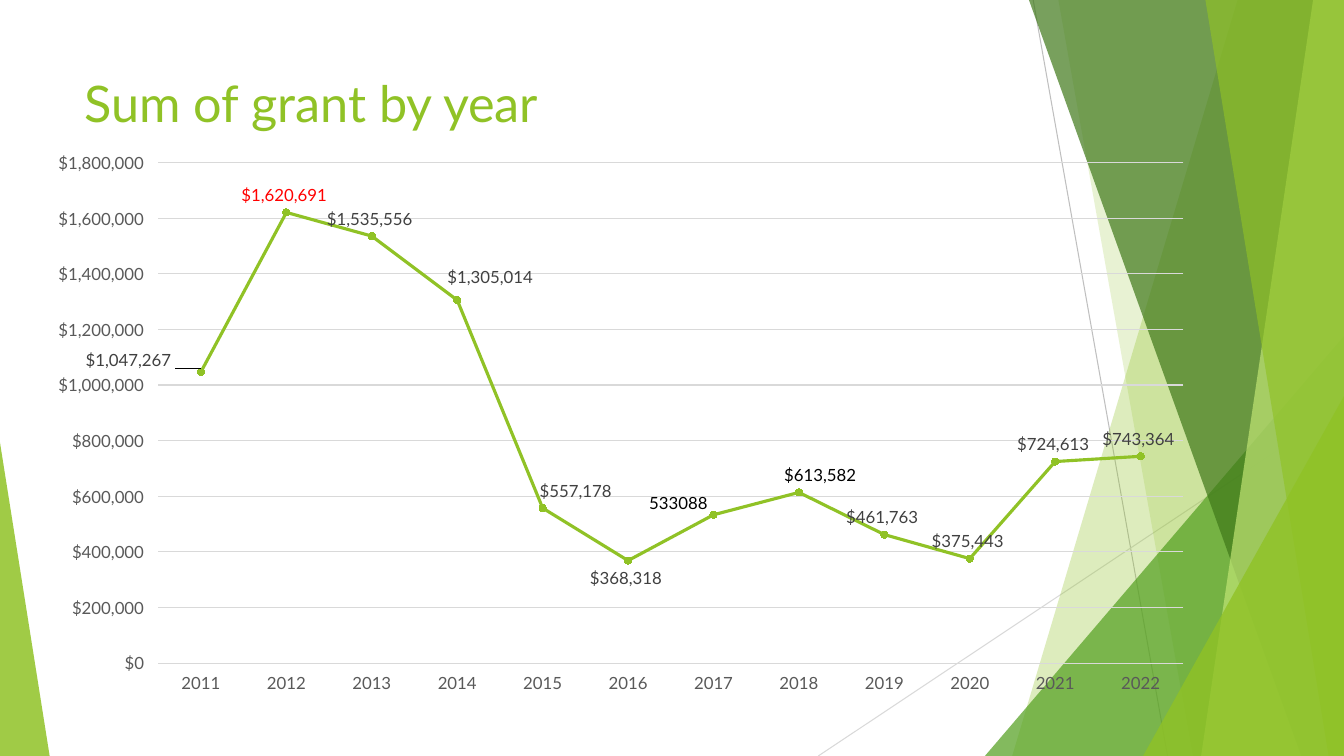
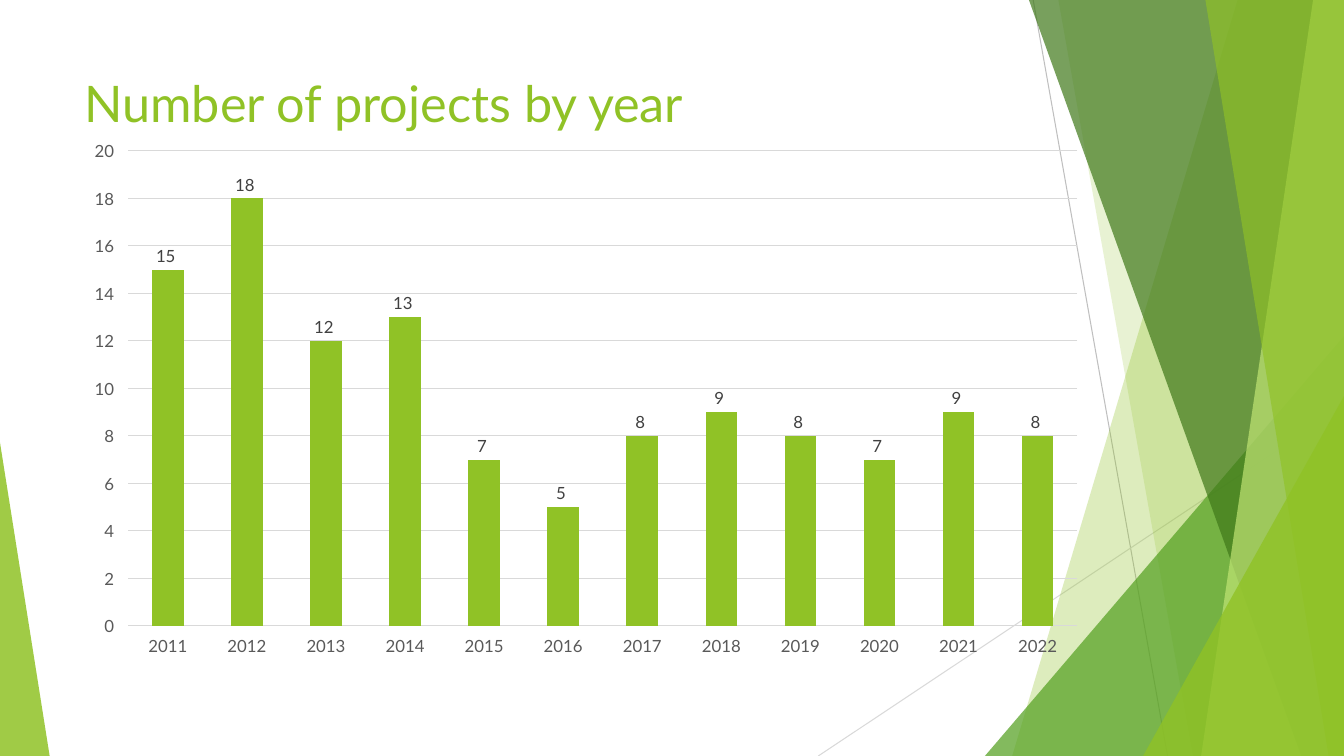
from pptx import Presentation
from pptx.chart.data import CategoryChartData as ChartData
from pptx.dml.color import RGBColor as Rgb
from pptx.enum.chart import XL_CHART_TYPE as Kind
from pptx.enum.chart import XL_LABEL_POSITION as Spot
from pptx.enum.chart import XL_MARKER_STYLE as Mark
from pptx.enum.chart import XL_TICK_LABEL_POSITION as Side
from pptx.enum.chart import XL_TICK_MARK as Tick
from pptx.enum.shapes import MSO_CONNECTOR as Link
from pptx.enum.shapes import MSO_SHAPE as Form
from pptx.enum.text import MSO_ANCHOR as Anchor
from pptx.enum.text import PP_ALIGN as Align
from pptx.oxml.ns import qn
from pptx.util import Pt
from lxml.etree import SubElement as sub

WIDE, HIGH = 960, 540
FONT = "Lato"
COLORS = {
    "lime": "90C226", "green": "54A021", "dark": "3F7819", "pale": "C0E474",
    "gray": "BFBFBF", "grid": "D9D9D9", "axis": "595959", "label": "404040",
    "black": "000000", "red": "FF0000",
}

# Backdrop, from back to front
RULES = [((738, 0), (834, HIGH), "gray"), ((WIDE, 290), (584.5, HIGH), "grid")]
# Bands run to the right edge: top x, bottom x, colour, opacity
# Wedges: left, top, width, height, apex, colour, opacity
PANES = [
    ("band", 884, 723, "lime", 30),
    ("band", 756, 852, "lime", 20),
    ("wedge", 703.5, 240, 256.5, 300, 1, "green", 72),
    ("band", 735, 929.5, "dark", 70),
    ("band", 938, 858, "pale", 70),
    ("band", 861, 949, "lime", 65),
    ("wedge", 816.5, 283, 143.5, 257, 1, "lime", 80),
    ("wedge", 0, 316, 35.5, 224, 0, "lime", 85),
]

YEARS = [str(year) for year in range(2011, 2023)]
GRANTS = [1047267, 1620691, 1535556, 1305014, 557178, 368318,
          533088, 613582, 461763, 375443, 724613, 743364]
COUNTS = [15, 18, 12, 13, 7, 5, 8, 9, 8, 7, 9, 8]

# Moved labels: point, side, shift as a share of the chart, colour, text
NOTES = [
    (0, Spot.ABOVE, (-0.06, 0.01), "label", None),
    (1, Spot.ABOVE, (0, 0), "red", None),
    (3, Spot.ABOVE, (0.03, -0.01), "label", None),
    (4, Spot.ABOVE, (0.03, 0), "label", None),
    (5, Spot.BELOW, (0, 0), "label", None),
    (6, Spot.ABOVE, (-0.03, 0.01), "black", "533088"),
    (7, Spot.ABOVE, (0.02, 0), "black", None),
]


def rgb(name):
    return Rgb.from_string(COLORS[name])


class Deck:
    def __init__(self):
        self.prs = Presentation()
        self.prs.slide_width, self.prs.slide_height = Pt(WIDE), Pt(HIGH)
        self.slide = None

    def style(self, font, size, color):
        font.name, font.size, font.color.rgb = FONT, Pt(size), rgb(color)

    def paint(self, shape, color, alpha):
        shape.shadow.inherit = False
        shape.line.fill.background()
        shape.fill.solid()
        shape.fill.fore_color.rgb = rgb(color)
        tint = next(shape.element.spPr.iter(qn("a:srgbClr")))
        sub(tint, qn("a:alpha")).set("val", str(alpha * 1000))

    def rule(self, start, end, color):
        line = self.slide.shapes.add_connector(
            Link.STRAIGHT, *(Pt(n) for n in start + end))
        line.line.color.rgb, line.line.width = rgb(color), Pt(0.75)
        sub(line.element.spPr, qn("a:effectLst"))

    def band(self, top, base, color, alpha):
        pen = self.slide.shapes.build_freeform(Pt(top), 0)
        pen.add_line_segments([(Pt(x), Pt(y)) for x, y in (
            (WIDE, 0), (WIDE, HIGH), (base, HIGH))])
        self.paint(pen.convert_to_shape(), color, alpha)

    def wedge(self, left, top, width, height, apex, color, alpha):
        shape = self.slide.shapes.add_shape(
            Form.ISOSCELES_TRIANGLE, Pt(left), Pt(top), Pt(width), Pt(height))
        shape.adjustments[0] = apex
        self.paint(shape, color, alpha)

    def page(self, text):
        self.slide = self.prs.slides.add_slide(self.prs.slide_layouts[5])
        for rule in RULES:
            self.rule(*rule)
        for kind, *pane in PANES:
            (self.band if kind == "band" else self.wedge)(*pane)
        title = self.slide.shapes.title
        title.left, title.top = Pt(53), Pt(48)
        title.width, title.height = Pt(677), Pt(53)
        frame = title.text_frame
        frame.text = text
        frame.vertical_anchor = Anchor.TOP
        frame.paragraphs[0].alignment = Align.LEFT
        self.style(frame.paragraphs[0].runs[0].font, 36, "lime")

    def chart(self, kind, box, vals, form, top, step, spot):
        data = ChartData(number_format=form)
        data.categories = YEARS
        data.add_series("Series 1", vals)
        chart = self.slide.shapes.add_chart(
            kind, *(Pt(n) for n in box), data).chart
        chart.has_legend = chart.has_title = False
        self.style(chart.font, 10, "black")
        # Axes
        cat, val = chart.category_axis, chart.value_axis
        for axis in (cat, val):
            axis.major_tick_mark = axis.minor_tick_mark = Tick.NONE
            axis.tick_label_position = Side.LOW
            self.style(axis.tick_labels.font, 12, "axis")
        val.minimum_scale, val.maximum_scale, val.major_unit = 0, top, step
        val.tick_labels.number_format = form
        val.tick_labels.number_format_is_linked = False
        val.format.line.fill.background()
        for line in (cat.format.line, val.major_gridlines.format.line):
            line.color.rgb, line.width = rgb("grid"), Pt(0.75)
        # Labels
        chart.plots[0].vary_by_categories = False
        row = chart.plots[0].series[0]
        labels = row.data_labels
        labels.show_value, labels.position = True, spot
        self.style(labels.font, 12, "label")
        return chart, row

    def bars(self, *args):
        chart, row = self.chart(Kind.COLUMN_CLUSTERED, *args, Spot.OUTSIDE_END)
        chart.plots[0].gap_width = 150
        row.format.fill.solid()
        row.format.fill.fore_color.rgb = rgb("lime")

    def trend(self, *args):
        chart, row = self.chart(Kind.LINE_MARKERS_STACKED, *args, Spot.ABOVE)
        row.smooth = False
        row.format.line.color.rgb, row.format.line.width = rgb("lime"), Pt(2.25)
        mark = row.marker
        mark.style, mark.size = Mark.CIRCLE, 5
        mark.format.fill.solid()
        mark.format.fill.fore_color.rgb = rgb("lime")
        mark.format.line.color.rgb = rgb("lime")
        for point, spot, shift, color, text in NOTES:
            self.note(row.points[point].data_label, spot, color, text)
        for node, note in zip(chart.element.iter(qn("c:dLbl")), NOTES):
            self.shift(node, note[2])

    def note(self, label, spot, color, text):
        font = label.font
        if text:
            label.text_frame.text = text
            font = label.text_frame.paragraphs[0].runs[0].font
        self.style(font, 12, color)
        label.position = spot

    def shift(self, node, move):
        place = node.makeelement(qn("c:layout"))
        node.find(qn("c:idx")).addnext(place)
        box = sub(place, qn("c:manualLayout"))
        for axis, part in zip("xy", move):
            sub(box, qn("c:" + axis)).set("val", str(part))


def main():
    deck = Deck()
    # Grants
    deck.page("Sum of grant by year")
    deck.trend((25, 101, 837, 402), GRANTS,
               r"\$#,##0_);[Red]\(\$#,##0\)", 1800000, 200000)
    # Projects
    deck.page("Number of projects by year")
    deck.bars((53, 93, 731, 383), COUNTS, r"#,##0_);[Red]\(#,##0\)", 20, 2)
    deck.prs.save("out.pptx")


if __name__ == "__main__":
    main()
